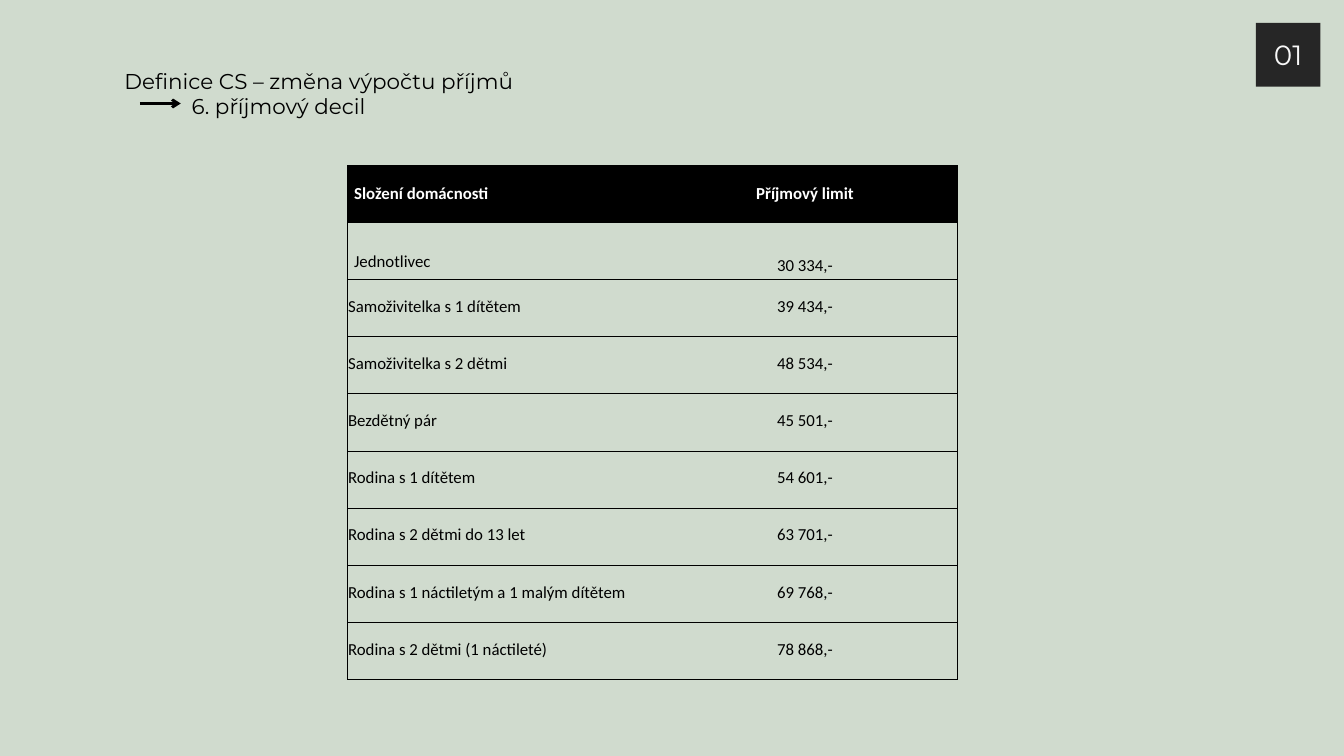
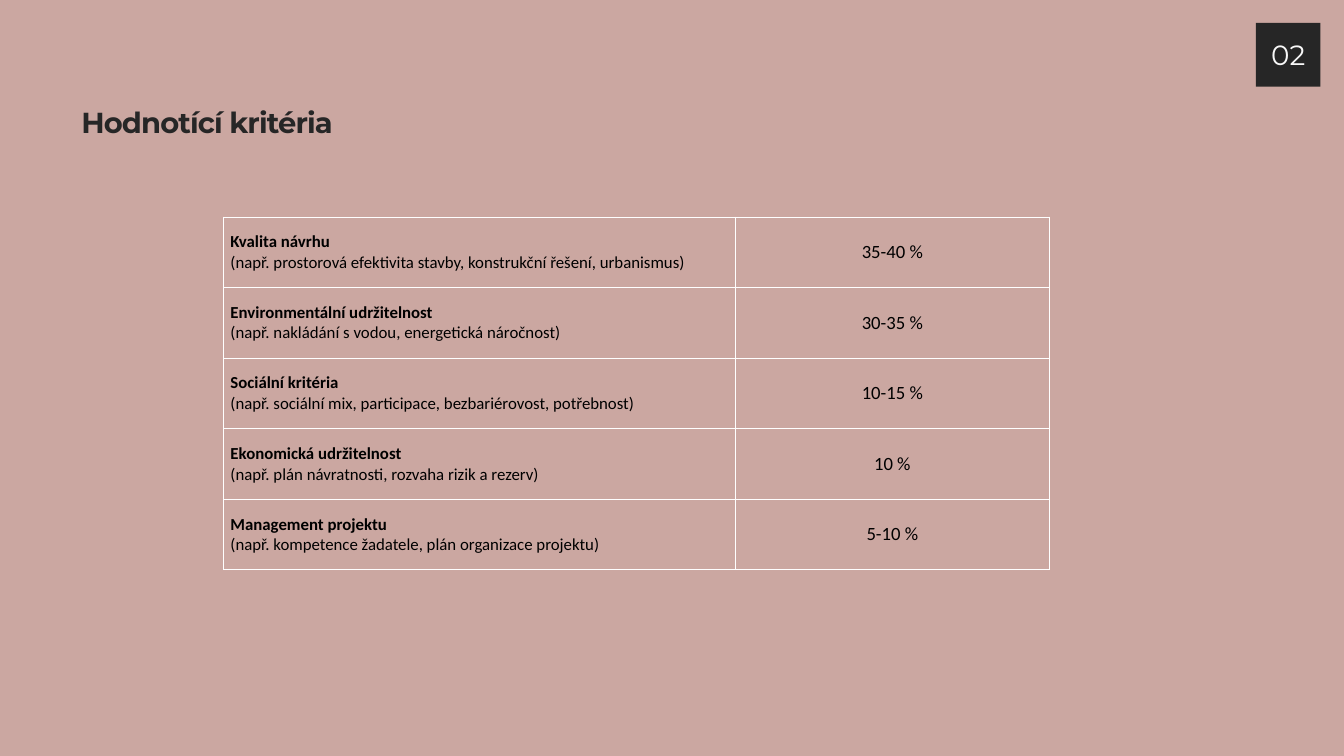
from dataclasses import dataclass

from lxml import etree
from pptx import Presentation, util as u
from pptx.dml.color import RGBColor
from pptx.enum import shapes, text
from pptx.oxml.ns import qn

WIDE, HIGH = 20, 11.25


@dataclass(frozen=True)
class Theme:
    sage: str = "D0DBCE"
    rose: str = "CBA7A1"
    dark: str = "262626"
    pale: str = "F8F8F8"
    black: str = "000000"
    white: str = "FFFFFF"
    head: str = "Montserrat"
    body: str = "Calibri"
    title: float = 23
    strong: float = 31
    badge: float = 29.8
    cell: float = 18
    score: float = 20


T = Theme()
LEFT, MID = text.PP_ALIGN.LEFT, text.PP_ALIGN.CENTER
TOP, CENTRE, BASE = (text.MSO_ANCHOR.TOP, text.MSO_ANCHOR.MIDDLE,
                     text.MSO_ANCHOR.BOTTOM)

TITLE = ["Definice CS – změna výpočtu příjmů", "6. příjmový decil"]
HEADS = ("Složení domácnosti", "Příjmový limit")
LIMITS = [
    ("Jednotlivec", "30 334,-"),
    ("Samoživitelka s 1 dítětem", "39 434,-"),
    ("Samoživitelka s 2 dětmi", "48 534,-"),
    ("Bezdětný pár", "45 501,-"),
    ("Rodina s 1 dítětem", "54 601,-"),
    ("Rodina s 2 dětmi do 13 let", "63 701,-"),
    ("Rodina s 1 náctiletým a 1 malým dítětem", "69 768,-"),
    ("Rodina s 2 dětmi (1 náctileté)", "78 868,-"),
]
CRITERIA = [
    ("Kvalita návrhu",
     "(např. prostorová efektivita stavby, konstrukční řešení, urbanismus)",
     "35-40 %"),
    ("Environmentální udržitelnost",
     "(např. nakládání s vodou, energetická náročnost)", "30-35 %"),
    ("Sociální kritéria",
     "(např. sociální mix, participace, bezbariérovost, potřebnost)",
     "10-15 %"),
    ("Ekonomická udržitelnost",
     "(např. plán návratnosti, rozvaha rizik a rezerv)", "10 %"),
    ("Management projektu",
     "(např. kompetence žadatele, plán organizace projektu)", "5-10 %"),
]


def rgb(code):
    return RGBColor.from_string(code)


def write(para, *parts, size=T.cell, font=T.body, color=T.black, bold=False,
          align=LEFT, lead=None, track=0):
    """Fill a paragraph, one line per part; only the first can be bold."""
    para.alignment = align
    if lead:
        para.line_spacing = u.Pt(lead)
    for i, part in enumerate(parts):
        if i:
            para.add_line_break()
        run = para.add_run()
        run.text = part
        run.font.size, run.font.name = u.Pt(size), font
        run.font.bold = bold and i == 0
        run.font.color.rgb = rgb(color)
        if track:
            run.font._element.set("spc", str(int(track * 100)))


def inset(part, left, top, right, base):
    part.margin_left, part.margin_top = u.Inches(left), u.Inches(top)
    part.margin_right, part.margin_bottom = u.Inches(right), u.Inches(base)


def place(shape, *box):
    shape.left, shape.top, shape.width, shape.height = map(u.Inches, box)


def start(deck, back, number, box, lines, **look):
    """Add a slide with its background, title and number badge."""
    slide = deck.slides.add_slide(deck.slide_layouts[5])
    slide.background.fill.solid()
    slide.background.fill.fore_color.rgb = rgb(back)

    title = slide.shapes.title
    place(title, *box)
    frame = title.text_frame
    inset(frame, 0, 0, 0, 0)
    frame.word_wrap, frame.auto_size = True, text.MSO_AUTO_SIZE.NONE
    frame.vertical_anchor = TOP
    for i, line in enumerate(lines):
        para = frame.add_paragraph() if i else frame.paragraphs[0]
        write(para, line, font=T.head, **look)

    badge = slide.shapes.add_shape(
        shapes.MSO_SHAPE.RECTANGLE,
        *map(u.Inches, (WIDE - 1.31, 0.34, 0.96, 0.95)))
    badge.shadow.inherit = False
    badge.fill.solid()
    badge.fill.fore_color.rgb = rgb(T.dark)
    badge.line.fill.background()
    inset(badge.text_frame, 0, 0, 0, 0)
    badge.text_frame.vertical_anchor = CENTRE
    write(badge.text_frame.paragraphs[0], f"{number:02}", size=T.badge,
          font=T.head, color=T.pale, align=MID)
    return slide


def grid(slide, left, top, cols, rows, high):
    frame = slide.shapes.add_table(
        rows, len(cols), *map(u.Inches, (left, top, sum(cols), rows * high)))
    table = frame.table
    table.first_row = table.horz_banding = False
    for col, wide in zip(table.columns, cols):
        col.width = u.Inches(wide)
    for row in table.rows:
        row.height = u.Inches(high)
    return table


def dress(cell, edges, color, width, fill=None):
    """Draw the named edges (of L, R, T, B), clear the others, set the fill."""
    props = cell._tc.get_or_add_tcPr()
    for edge in "LRTB":
        line = etree.SubElement(props, qn(f"a:ln{edge}"), w=str(u.Pt(width)))
        if edge in edges:
            paint = etree.SubElement(line, qn("a:solidFill"))
            etree.SubElement(paint, qn("a:srgbClr"), val=color)
        else:
            etree.SubElement(line, qn("a:noFill"))
    if fill:
        cell.fill.solid()
        cell.fill.fore_color.rgb = rgb(fill)
    else:
        cell.fill.background()
    cell.vertical_anchor = CENTRE


def arrow(slide, x, y, end):
    line = slide.shapes.add_connector(
        shapes.MSO_CONNECTOR.STRAIGHT, *map(u.Inches, (x, y, end, y)))
    line.line.width = u.Pt(3)
    line.line.color.rgb = rgb(T.black)
    etree.SubElement(line.line._get_or_add_ln(), qn("a:tailEnd"), type="arrow")
    etree.SubElement(line._element.spPr, qn("a:effectLst"))


def incomes(deck):
    slide = start(deck, T.sage, 1, (1.85, 1.02, 16.53, 0.79), TITLE,
                  size=T.title, lead=27)
    last = slide.shapes.title.text_frame.paragraphs[1]
    last._p.get_or_add_pPr().set("marL", str(u.Inches(1)))
    arrow(slide, 2.08, 1.54, 2.69)

    rows = [HEADS] + LIMITS
    table = grid(slide, 5.17, 2.46, (4.54, 4.54), len(rows), 0.85)
    for r, row in enumerate(rows):
        for c, words in enumerate(row):
            cell, head = table.cell(r, c), r == 0
            dress(cell, "TB" + "LR"[c], T.black, 0.75, T.black if head else None)
            if r > 1 or (r and c):
                inset(cell, 0.01, 0.01, 0.01, 0.05)
            write(cell.text_frame.paragraphs[0], words, bold=head,
                  color=T.white if head else T.black, align=(LEFT, MID)[c])
    for cell in table.rows[1].cells:
        cell.vertical_anchor = BASE
    table.cell(1, 0).margin_bottom = u.Inches(0.12)


def criteria(deck):
    slide = start(deck, T.rose, 2, (1.21, 1.56, 17.97, 0.6),
                  ["Hodnotící kritéria"], size=T.strong, color=T.dark,
                  bold=True, track=-0.9)
    table = grid(slide, 3.33, 3.23, (7.62, 4.66), len(CRITERIA), 1.05)
    for row, (name, detail, score) in zip(table.rows, CRITERIA):
        for cell in row.cells:
            dress(cell, "LRTB", T.white, 1)
        first, second = (cell.text_frame.paragraphs[0] for cell in row.cells)
        write(first, name, detail, bold=True)
        write(second, score, size=T.score, align=MID)


def main():
    deck = Presentation()
    deck.slide_width, deck.slide_height = u.Inches(WIDE), u.Inches(HIGH)
    incomes(deck)
    criteria(deck)
    deck.save("out.pptx")


if __name__ == "__main__":
    main()
